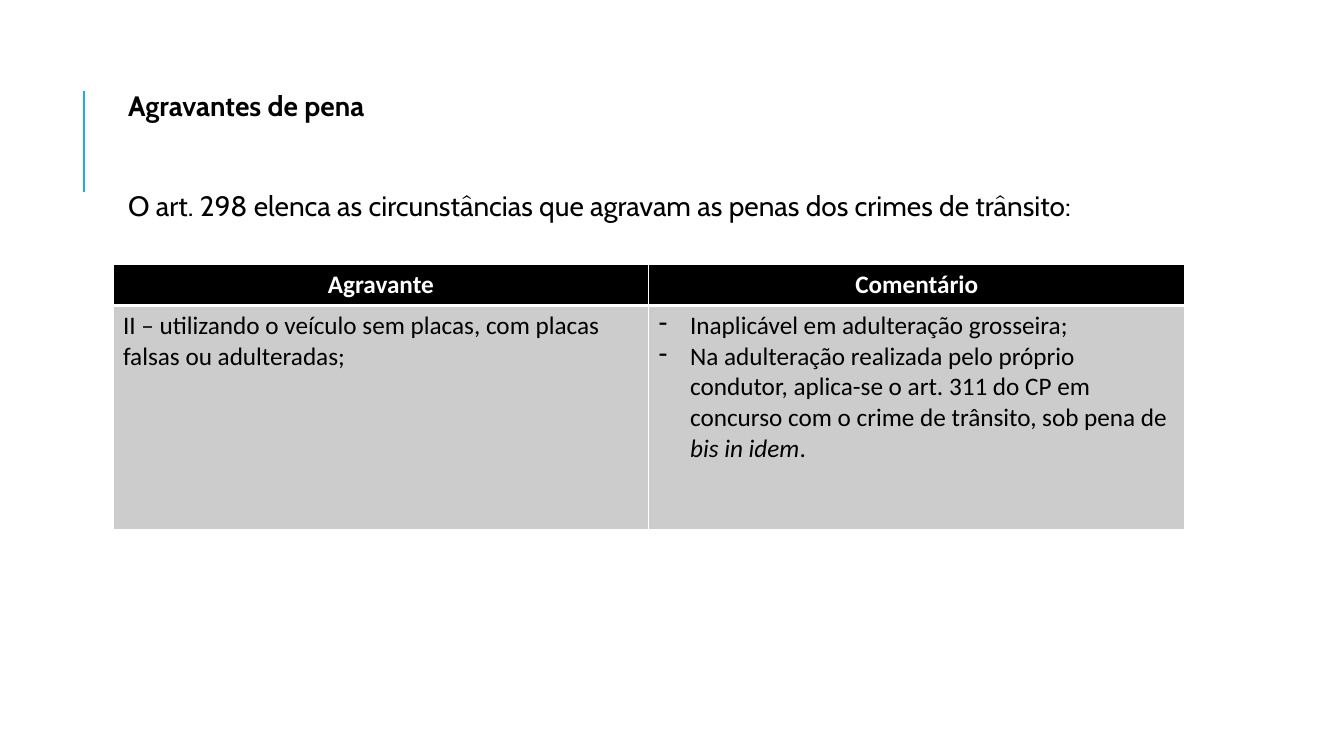
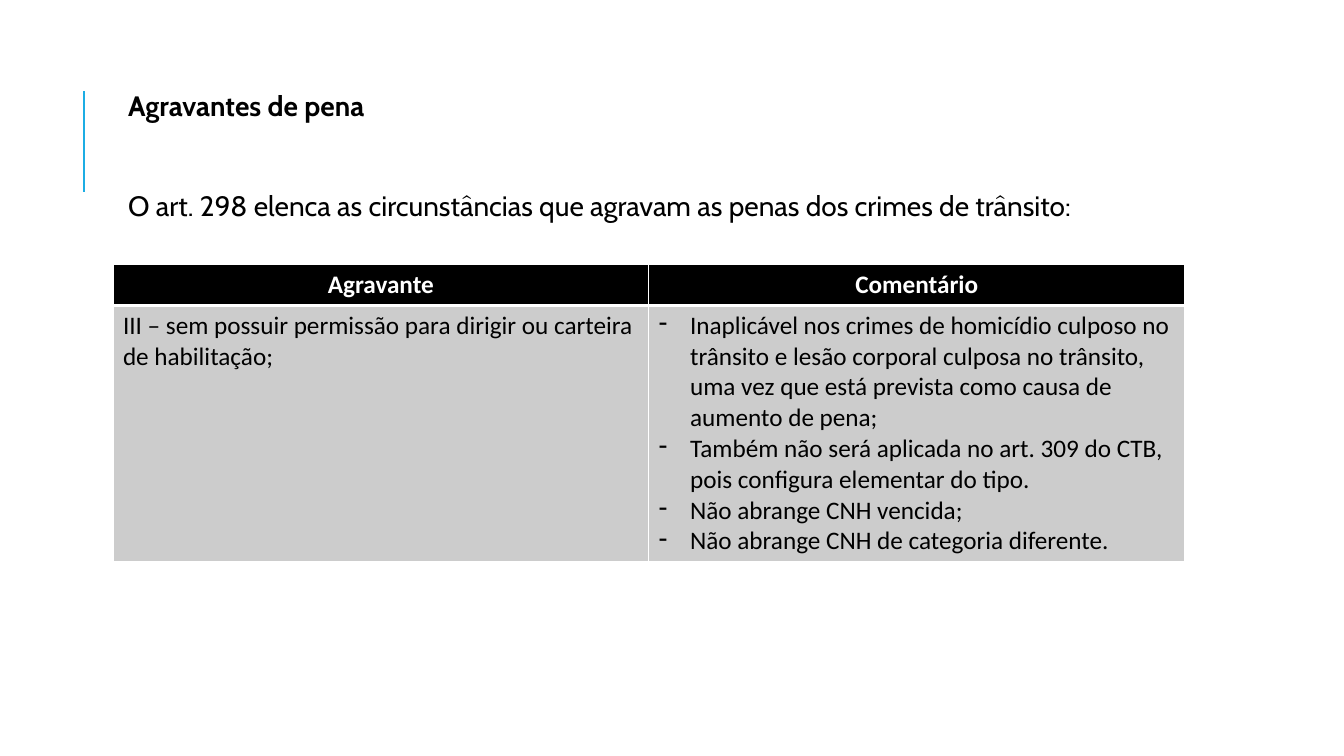
"""Build two slides on aggravating circumstances in traffic crimes."""
from lxml import etree
from pptx import Presentation
from pptx.dml.color import RGBColor
from pptx.enum.shapes import MSO_CONNECTOR
from pptx.enum.text import MSO_ANCHOR, MSO_AUTO_SIZE, PP_ALIGN
from pptx.oxml.ns import qn
from pptx.util import Inches, Pt

BLACK = RGBColor(0x00, 0x00, 0x00)
WHITE = RGBColor(0xFF, 0xFF, 0xFF)
GRAY = RGBColor(0xCC, 0xCC, 0xCC)
BLUE = RGBColor(0x1C, 0xAD, 0xE4)

LEFT, WIDTH = Inches(1.12), Inches(10.63)
TITLE = "Agravantes de pena"
INTRO = "O art. 298 elenca as circunstâncias que agravam as penas dos crimes de trânsito:"
HEADERS = ["Agravante", "Comentário"]
SLIDES = [
    ("II – utilizando o veículo sem placas, com placas falsas ou adulteradas;",
     [["Inaplicável em adulteração grosseira;"],
      ["Na adulteração realizada pelo próprio condutor, aplica-se o art. 311 do CP "
       "em concurso com o crime de trânsito, sob pena de ", "bis in idem", "."]],
     2.22),
    ("III – sem possuir permissão para dirigir ou carteira de habilitação;",
     [["Inaplicável nos crimes de homicídio culposo no trânsito e lesão corporal "
       "culposa no trânsito, uma vez que está prevista como causa de aumento de pena;"],
      ["Também não será aplicada no art. 309 do CTB, pois configura elementar do tipo."],
      ["Não abrange CNH vencida;"],
      ["Não abrange CNH de categoria diferente."]],
     2.53),
]


def format_text(sp, text, top, bold):
    sp.left, sp.top, sp.width, sp.height = LEFT, Inches(top), WIDTH, Inches(0.5)
    tf = sp.text_frame
    tf.text = text
    tf.word_wrap = True
    tf.auto_size = MSO_AUTO_SIZE.NONE
    tf.vertical_anchor = MSO_ANCHOR.TOP
    tf.margin_left = Inches(0.15)
    tf.margin_top = tf.margin_right = tf.margin_bottom = Inches(0.05)
    p = tf.paragraphs[0]
    p.alignment = PP_ALIGN.JUSTIFY
    p.line_spacing = 0.9
    font = p.runs[0].font
    font.name, font.size, font.bold = "Cabin", Pt(20), bold
    font.color.rgb = BLACK


def format_cell(cell, row):
    tcPr = cell._tc.get_or_add_tcPr()
    thick = "lnB" if row == 0 else "lnT"
    for side in ("lnL", "lnR", "lnT", "lnB"):
        ln = etree.SubElement(tcPr, qn(f"a:{side}"), w=str(Pt(3 if side == thick else 1)))
        fill = etree.SubElement(ln, qn("a:solidFill"))
        etree.SubElement(fill, qn("a:srgbClr"), val=str(WHITE))
    cell.fill.solid()
    cell.fill.fore_color.rgb = BLACK if row == 0 else GRAY
    for p in cell.text_frame.paragraphs:
        p.alignment = PP_ALIGN.CENTER if row == 0 else PP_ALIGN.LEFT
        for r in p.runs:
            r.font.name, r.font.size, r.font.bold = "Calibri", Pt(18), row == 0
            r.font.color.rgb = WHITE if row == 0 else BLACK


prs = Presentation()
prs.slide_width, prs.slide_height = Inches(13.33), Inches(7.5)

for offence, comments, body_height in SLIDES:
    s = prs.slides.add_slide(prs.slide_layouts[5])

    rule = s.shapes.add_connector(
        MSO_CONNECTOR.STRAIGHT, Inches(0.83), Inches(1.9), Inches(0.83), Inches(0.9))
    rule.line.color.rgb = BLUE
    rule.line.width = Pt(1.5)
    etree.SubElement(rule._element.spPr, qn("a:effectLst"))

    format_text(s.shapes.title, TITLE, 0.87, True)
    intro = s.shapes.add_textbox(LEFT, Inches(1.86), WIDTH, Inches(0.5))
    format_text(intro, INTRO, 1.86, False)

    table = s.shapes.add_table(
        2, 2, LEFT, Inches(2.62), WIDTH, Inches(0.41 + body_height)).table
    table.rows[0].height = Inches(0.41)
    table.rows[1].height = Inches(body_height)
    for col, header in enumerate(HEADERS):
        table.cell(0, col).text = header
    table.cell(1, 0).text = offence

    tf = table.cell(1, 1).text_frame
    for i, parts in enumerate(comments):
        p = tf.paragraphs[0] if i == 0 else tf.add_paragraph()
        pPr = p._p.get_or_add_pPr()
        pPr.set("marL", str(Inches(0.31)))
        pPr.set("indent", str(-Inches(0.31)))
        etree.SubElement(pPr, qn("a:buChar"), char="-")
        for part in parts:
            r = p.add_run()
            r.text = part
            r.font.italic = part == "bis in idem"

    for row in range(2):
        for col in range(2):
            format_cell(table.cell(row, col), row)

prs.save("out.pptx")
